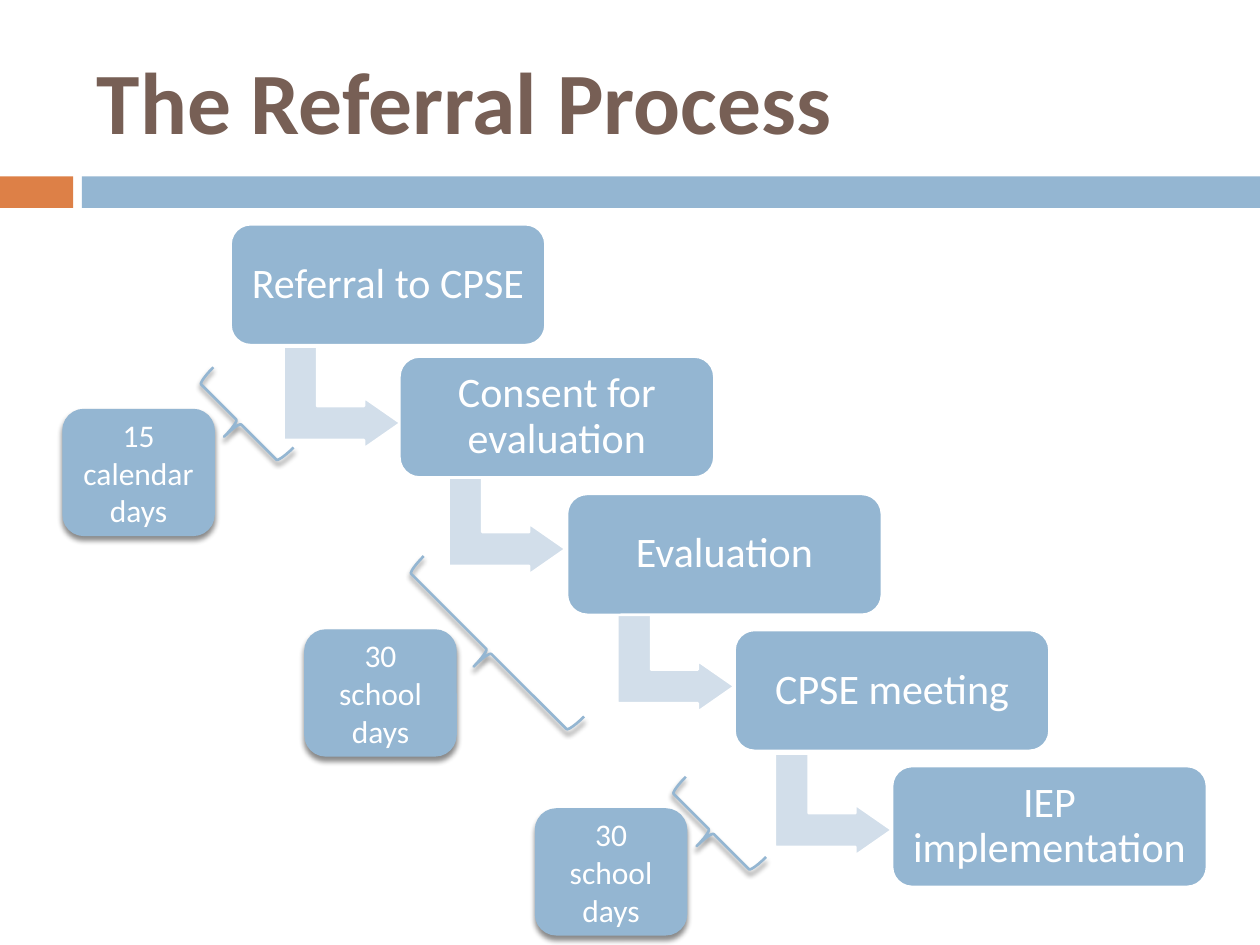
"""Build the slide that shows the steps and deadlines of the referral process."""
from typing import NamedTuple

from lxml import etree
from pptx import Presentation
from pptx.dml.color import RGBColor
from pptx.enum.shapes import MSO_SHAPE
from pptx.enum.text import MSO_ANCHOR, PP_ALIGN
from pptx.oxml.ns import qn
from pptx.util import Inches, Pt

RECTANGLE = MSO_SHAPE.RECTANGLE
ROUNDED = MSO_SHAPE.ROUNDED_RECTANGLE
BENT_ARROW = MSO_SHAPE.BENT_UP_ARROW
BRACE = MSO_SHAPE.LEFT_BRACE
MIDDLE = MSO_ANCHOR.MIDDLE
CENTER = PP_ALIGN.CENTER
LEFT = PP_ALIGN.LEFT

FONT = "Calibri"
COLORS = {
    "accent": "DD8047",
    "blue": "94B6D2",
    "pale": "D2DEEA",
    "title": "775F55",
    "white": "FFFFFF",
    "shadow": "000000",
}


class Box(NamedTuple):
    left: float
    top: float
    width: float
    height: float


class Step(NamedTuple):
    label: str
    left: float
    top: float


class Turn(NamedTuple):
    left: float
    top: float


class Deadline(NamedTuple):
    label: str
    left: float
    top: float
    brace: Box


STEPS = [
    Step("Referral to CPSE", 1.83, 1.78),
    Step("Consent for evaluation", 3.17, 2.83),
    Step("Evaluation", 4.5, 3.92),
    Step("CPSE meeting", 5.83, 5),
    Step("IEP implementation", 7.08, 6.08),
]
TURNS = [Turn(2.31, 2.69), Turn(3.62, 3.69), Turn(4.96, 4.78), Turn(6.21, 5.92)]
DEADLINES = [
    Deadline("15 calendar days", 0.5, 3.25, Box(1.73, 2.9, 0.33, 0.9)),
    Deadline("30 school days", 2.42, 5, Box(3.71, 4.27, 0.34, 1.8)),
    Deadline("30 school days", 4.25, 6.42, Box(5.48, 6.15, 0.33, 0.9)),
]


def rgb(name: str) -> RGBColor:
    """Return the named colour."""
    return RGBColor.from_string(COLORS[name])


def add_shape(slide, preset, box: Box, fill=None, line=None, weight: float = 1.5):
    """Add a preset shape without a shadow."""
    shape = slide.shapes.add_shape(preset, *map(Inches, box))
    shape.shadow.inherit = False
    if fill:
        shape.fill.solid()
        shape.fill.fore_color.rgb = rgb(fill)
    else:
        shape.fill.background()
    if line:
        shape.line.color.rgb = rgb(line)
        shape.line.width = Pt(weight)
    else:
        shape.line.fill.background()
    return shape


def add_shadow(shape) -> None:
    """Give the shape a soft shadow that falls downwards."""
    effects = shape._element.spPr.find(qn("a:effectLst"))
    shadow = etree.SubElement(
        effects, qn("a:outerShdw"), blurRad=str(Pt(3)), dist=str(Pt(2.4)),
        dir="5400000", rotWithShape="0")
    color = etree.SubElement(shadow, qn("a:srgbClr"), val=COLORS["shadow"])
    etree.SubElement(color, qn("a:alpha"), val="45000")


def write(shape, text: str, size: float, color: str = "white", align=CENTER,
          bold: bool = False) -> None:
    """Write one vertically centred paragraph into the shape."""
    frame = shape.text_frame
    frame.word_wrap = True
    frame.vertical_anchor = MIDDLE
    frame.text = text
    paragraph = frame.paragraphs[0]
    paragraph.alignment = align
    font = paragraph.runs[0].font
    font.name = FONT
    font.size = Pt(size)
    font.bold = bold
    font.color.rgb = rgb(color)


def add_turn(slide, turn: Turn) -> None:
    """Add the bent arrow that leads to the next step."""
    arrow = add_shape(slide, BENT_ARROW, Box(*turn, 0.81, 0.93), "pale", "white")
    arrow.rotation = 90
    for index, value in enumerate((0.33, 0.25, 0.36)):
        arrow.adjustments[index] = value


def add_step(slide, step: Step) -> None:
    """Add the box of one process step."""
    card = add_shape(slide, ROUNDED, Box(step.left, step.top, 2.5, 0.96), "blue", "white")
    write(card, step.label, 24)
    frame = card.text_frame
    frame.margin_top = frame.margin_bottom = Inches(0.1)
    frame.paragraphs[0].line_spacing = 0.9


def add_deadline(slide, deadline: Deadline) -> None:
    """Add a time limit and the brace that ties it to its step."""
    brace = add_shape(slide, BRACE, deadline.brace, line="blue")
    brace.rotation = 315
    add_shadow(brace)
    card = add_shape(slide, ROUNDED, Box(deadline.left, deadline.top, 1.2, 1),
                     "blue", "blue", 0.79)
    add_shadow(card)
    write(card, deadline.label, 18)


def main() -> None:
    """Build and save the presentation."""
    deck = Presentation()
    deck.slide_width, deck.slide_height = Inches(10), Inches(7.5)
    slide = deck.slides.add_slide(deck.slide_layouts[6])
    add_shape(slide, RECTANGLE, Box(0, 1.4, 0.58, 0.25), "accent")
    add_shape(slide, RECTANGLE, Box(0.65, 1.4, 9.35, 0.25), "blue")
    title = slide.shapes.add_textbox(*map(Inches, Box(0.67, 0.25, 8.92, 1.08)))
    write(title, "The Referral Process", 50, "title", LEFT, True)
    for turn in TURNS:
        add_turn(slide, turn)
    for step in STEPS:
        add_step(slide, step)
    for deadline in DEADLINES:
        add_deadline(slide, deadline)
    deck.save("out.pptx")


if __name__ == "__main__":
    main()
